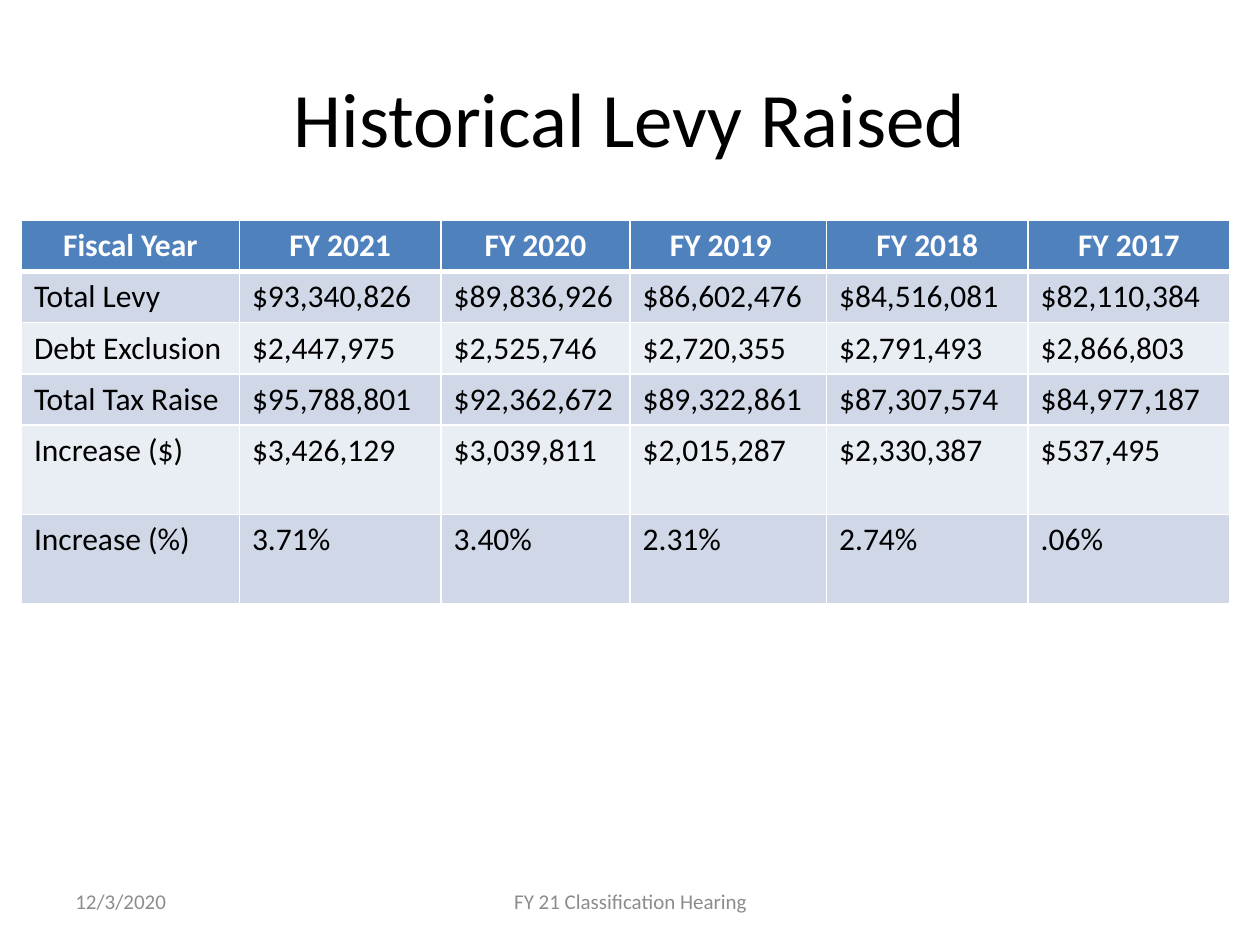
from dataclasses import dataclass

from lxml.etree import SubElement
from pptx import Presentation
from pptx.dml.color import RGBColor
from pptx.enum.text import MSO_ANCHOR as Anchor, PP_ALIGN as Align
from pptx.oxml.ns import qn
from pptx.util import Inches, Pt

FONT = "Calibri"
BLACK = RGBColor(0x00, 0x00, 0x00)
WHITE = RGBColor(0xFF, 0xFF, 0xFF)
GRAY = RGBColor(0x8C, 0x8C, 0x8C)
HEADER_BLUE = RGBColor(0x4F, 0x81, 0xBD)
BANDS = (RGBColor(0xD0, 0xD8, 0xE8), RGBColor(0xE9, 0xED, 0xF4))

COLUMN_WIDTHS = (1.73, 1.6, 1.5, 1.56, 1.6, 1.6)
ROW_HEIGHTS = (0.4, 0.4, 0.4, 0.4, 0.71, 0.71)
LEVY_ROWS = (
    ("Fiscal Year", "FY 2021", "FY 2020", "FY 2019", "FY 2018", "FY 2017"),
    ("Total Levy", "$93,340,826", "$89,836,926", "$86,602,476", "$84,516,081", "$82,110,384"),
    ("Debt Exclusion", "$2,447,975", "$2,525,746", "$2,720,355", "$2,791,493", "$2,866,803"),
    ("Total Tax Raise", "$95,788,801", "$92,362,672", "$89,322,861", "$87,307,574", "$84,977,187"),
    ("Increase ($)", "$3,426,129", "$3,039,811", "$2,015,287", "$2,330,387", "$537,495"),
    ("Increase (%)", "3.71%", "3.40%", "2.31%", "2.74%", ".06%"),
)


@dataclass(frozen=True)
class Label:
    text: str
    left: float
    top: float
    width: float
    height: float
    size: int
    color: RGBColor
    align: Align = Align.CENTER


LABELS = (
    Label("Historical Levy Raised", 0.5, 0.3, 9, 1.25, 44, BLACK),
    Label("12/3/2020", 0.5, 6.95, 2.33, 0.4, 12, GRAY, Align.LEFT),
    Label("FY 21 Classification Hearing", 3.42, 6.95, 3.17, 0.4, 12, GRAY),
)


def write_text(frame, text: str, *, size: int, color: RGBColor,
               align: Align = Align.LEFT, bold: bool = False) -> None:
    paragraph = frame.paragraphs[0]
    paragraph.alignment = align
    run = paragraph.add_run()
    run.text = text
    run.font.name = FONT
    run.font.size = Pt(size)
    run.font.bold = bold
    run.font.color.rgb = color


def add_label(slide, label: Label) -> None:
    box = slide.shapes.add_textbox(Inches(label.left), Inches(label.top),
                                   Inches(label.width), Inches(label.height))
    frame = box.text_frame
    frame.word_wrap = True
    frame.vertical_anchor = Anchor.MIDDLE
    write_text(frame, label.text, size=label.size, color=label.color, align=label.align)


def set_borders(cell, *, top: float = 1, bottom: float = 1) -> None:
    """Draw white cell borders; call before filling, as the schema puts lines first."""
    properties = cell._tc.get_or_add_tcPr()
    for side, points in (("L", 1), ("R", 1), ("T", top), ("B", bottom)):
        line = SubElement(properties, qn(f"a:ln{side}"), w=str(Pt(points)))
        fill = SubElement(line, qn("a:solidFill"))
        SubElement(fill, qn("a:srgbClr"), val=str(WHITE))


def add_levy_table(slide, left: float, top: float) -> None:
    table = slide.shapes.add_table(
        len(ROW_HEIGHTS), len(COLUMN_WIDTHS), Inches(left), Inches(top),
        Inches(sum(COLUMN_WIDTHS)), Inches(sum(ROW_HEIGHTS))).table
    for column, width in zip(table.columns, COLUMN_WIDTHS):
        column.width = Inches(width)
    for row, height in zip(table.rows, ROW_HEIGHTS):
        row.height = Inches(height)

    for r, values in enumerate(LEVY_ROWS):
        header = r == 0
        for c, value in enumerate(values):
            cell = table.cell(r, c)
            set_borders(cell, top=3 if r == 1 else 1, bottom=3 if header else 1)
            cell.fill.solid()
            cell.fill.fore_color.rgb = HEADER_BLUE if header else BANDS[(r - 1) % 2]
            write_text(cell.text_frame, value, size=18, bold=header,
                       color=WHITE if header else BLACK,
                       align=Align.CENTER if header else Align.LEFT)
    # The FY 2019 heading sits slightly left of its column's centre.
    table.cell(0, 3).margin_right = Inches(0.22)


def main() -> None:
    deck = Presentation()
    deck.slide_width, deck.slide_height = Inches(10), Inches(7.5)
    slide = deck.slides.add_slide(deck.slide_layouts[6])
    add_levy_table(slide, 0.17, 1.75)
    for label in LABELS:
        add_label(slide, label)
    deck.save("out.pptx")


if __name__ == "__main__":
    main()
